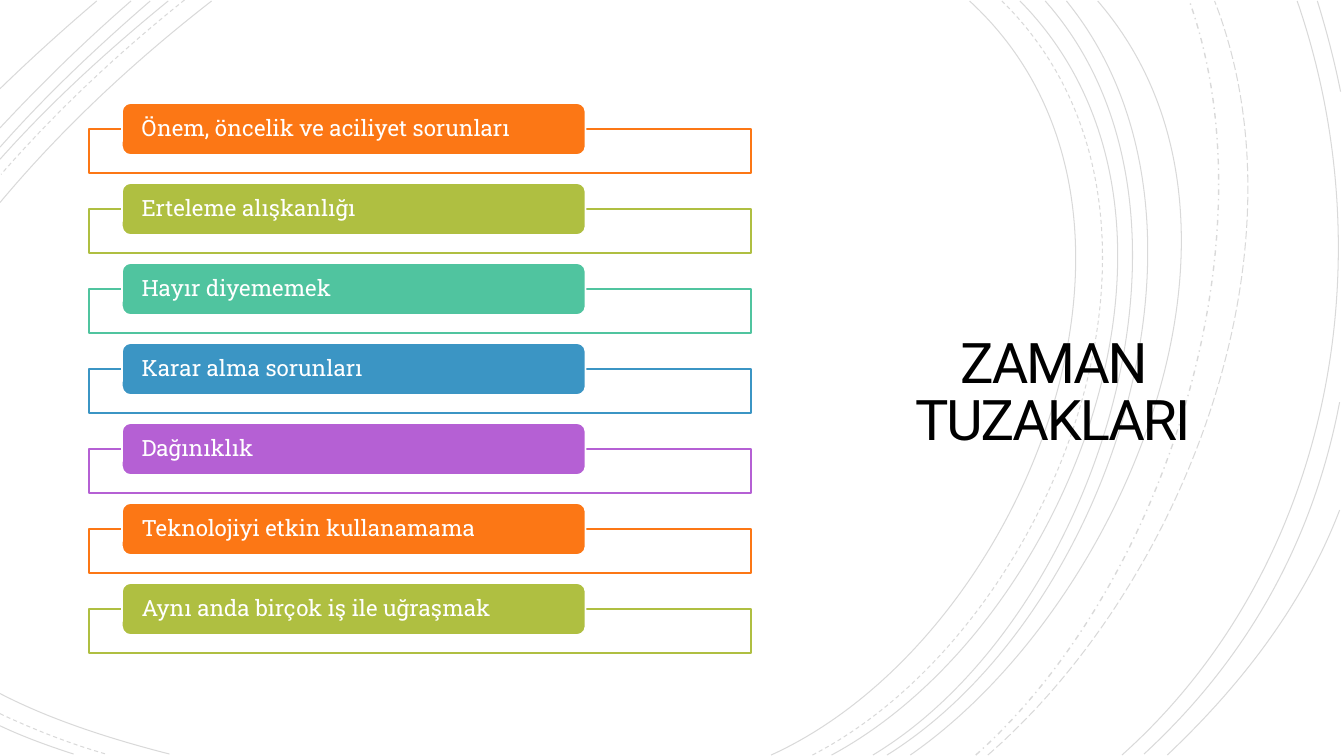
import dataclasses
import pptx
import pptx.dml.color
import pptx.enum.dml
import pptx.enum.shapes
import pptx.enum.text
import pptx.oxml
import pptx.oxml.ns
import pptx.util

Pt = pptx.util.Pt
RGB = pptx.dml.color.RGBColor.from_string
Dash = pptx.enum.dml.MSO_LINE
Align = pptx.enum.text.PP_ALIGN
Preset = pptx.enum.shapes.MSO_SHAPE
qn = pptx.oxml.ns.qn


@dataclasses.dataclass(frozen=True)
class Theme:
    paper: str = "FFFFFF"
    ink: str = "000000"
    accents: tuple = ("FC7715", "AFBF41", "50C49F", "3B95C4", "B560D4")
    title_font: str = "Roboto"
    label_font: str = "Roboto Slab"
    title_size: int = 40
    label_size: int = 16


theme = Theme()


def write(shape, text, *, font, size, color, align, spacing, insets, tracking=0):
    frame = shape.text_frame
    frame.word_wrap = True
    frame.auto_size = pptx.enum.text.MSO_AUTO_SIZE.NONE
    frame.vertical_anchor = pptx.enum.text.MSO_ANCHOR.MIDDLE
    frame.margin_left = frame.margin_right = Pt(insets[0])
    frame.margin_top = frame.margin_bottom = Pt(insets[1])
    paragraph = frame.paragraphs[0]
    paragraph.alignment = align
    paragraph.line_spacing = spacing
    run = paragraph.add_run()
    run.text = text
    run.font.name = font
    run.font.size = Pt(size)
    run.font.color.rgb = RGB(color)
    if tracking:
        run.font._element.set("spc", str(int(tracking * 100)))


def paint(fill, color, opacity=100):
    fill.solid()
    fill.fore_color.rgb = RGB(color)
    if opacity < 100:
        tint = fill._xPr.find(qn("a:solidFill"))[0]
        pptx.oxml.ns  # namespace registry
        tint.append(pptx.oxml.parse_xml(
            '<a:alpha xmlns:a="http://schemas.openxmlformats.org/drawingml/2006/main" '
            f'val="{opacity * 1000}"/>'))


deck = pptx.Presentation()
deck.slide_width, deck.slide_height = Pt(960), Pt(540)
slide = deck.slides.add_slide(deck.slide_layouts[5])
paint(slide.background.fill, theme.paper)

BOTTOM, TOP = 539.3, 0.7
sweeps = [
    (Dash.SOLID, 550.8, (731.5, 457.2), (855.4, 150.5), 692.6),
    (Dash.DASH, 580.3, (753.1, 450), (869.8, 152.6), 715.7),
    (Dash.SOLID, 594, (763.9, 447.8), (879.1, 153.4), 728.6),
    (Dash.SOLID, 623.5, (782.6, 443.5), (879.1, 149.8), 746.6),
    (Dash.SOLID, 633.6, (792, 440.6), (887.8, 155.5), 761.8),
    (Dash.SOLID, 650.2, (801.4, 434.2), (920.2, 158.4), 784.1),
    (Dash.DASH_DOT, 697, (830.9, 419.8), (910.8, 173.5), 849.6),
    (Dash.LONG_DASH, 705.6, (844.6, 418.3), (937.4, 180.7), 867.6),
    (Dash.SOLID, 801.4, (950.4, 406.1), (990.7, 186.5), 926.6),
]
corner_arcs = [
    (Dash.SOLID, (817.2, 538.6), (891.4, 470.2), (938.2, 385.9), (956.9, 287.3)),
    (Dash.SOLID, (957.6, 65.5), (953.3, 43.9), (947.5, 21.6), (941, 0.7)),
    (Dash.SOLID, (833.8, 539.3), (886.3, 489.6), (931, 432), (956.9, 364.3)),
    (Dash.SOLID, (0, 495.4), (37.4, 514.8), (81.4, 528.5), (121, 538.6)),
    (Dash.DASH, (0, 509.8), (24.5, 521.3), (50.4, 531.4), (75.6, 538.6)),
    (Dash.SOLID, (0, 518.4), (16.6, 526.3), (34.6, 532.8), (52.6, 538.6)),
    (Dash.SOLID, (151.2, 0.7), (96.5, 43.2), (44.6, 91.4), (0, 144.7)),
    (Dash.DASH, (131.8, 0), (85, 37.4), (40.3, 79.2), (0.7, 124.6)),
    (Dash.SOLID, (120.2, 0.7), (77.8, 35.3), (36.7, 72.7), (0, 113.8)),
    (Dash.SOLID, (107.3, 0.7), (69.8, 33.1), (33.1, 67.7), (0, 105.1)),
    (Dash.SOLID, (93.6, 0.7), (60.5, 29.5), (29.5, 59.8), (0, 91.4)),
    (Dash.SOLID, (69.1, 0.7), (45.4, 20.9), (22.3, 41.8), (0, 63.4)),
]
arcs = [(dash, (foot, BOTTOM), low, high, (head, TOP))
        for dash, foot, low, high, head in sweeps] + corner_arcs

for dash, *points in arcs:
    start, *bends = [(Pt(x), Pt(y)) for x, y in points]
    outline = slide.shapes.build_freeform(*start)
    outline.add_line_segments(bends, close=False)
    arc = outline.convert_to_shape()
    arc.shadow.inherit = False
    arc.fill.background()
    paint(arc.line.fill, theme.ink, 15)
    arc.line.width = Pt(1 if dash == Dash.DASH_DOT else 0.75)
    arc.line.dash_style = dash
    route = next(arc._element.iter(qn("a:path")))
    curve = route.makeelement(qn("a:cubicBezTo"))
    for segment in route.findall(qn("a:lnTo")):
        curve.append(segment[0])
        route.remove(segment)
    route.append(curve)

heading = slide.shapes.title
heading.left, heading.top, heading.width, heading.height = Pt(614), Pt(185), Pt(276), Pt(194)
write(heading, "ZAMAN TUZAKLARI", font=theme.title_font, size=theme.title_size,
      color=theme.ink, align=Align.CENTER, spacing=0.85, insets=(18, 18), tracking=-1.5)

time_traps = [
    "Önem, öncelik ve aciliyet sorunları",
    "Erteleme alışkanlığı",
    "Hayır diyememek",
    "Karar alma sorunları",
    "Dağınıklık",
    "Teknolojiyi etkin kullanamama",
    "Aynı anda birçok iş ile uğraşmak",
]
FIRST_TOP, PITCH = 73.6, 57.14

for row, trap in enumerate(time_traps):
    accent = theme.accents[row % len(theme.accents)]
    top = FIRST_TOP + row * PITCH
    tray = slide.shapes.add_shape(Preset.RECTANGLE, Pt(63.4), Pt(top + 18.5), Pt(473), Pt(31.7))
    label = slide.shapes.add_shape(Preset.ROUNDED_RECTANGLE, Pt(87.1), Pt(top), Pt(331.2), Pt(37.2))
    for part, fill, line, opacity in ((tray, theme.paper, accent, 90),
                                      (label, accent, theme.paper, 100)):
        part.shadow.inherit = False
        paint(part.fill, fill, opacity)
        paint(part.line.fill, line)
        part.line.width = Pt(1.25)
    write(label, trap, font=theme.label_font, size=theme.label_size, color=theme.paper,
          align=Align.LEFT, spacing=0.9, insets=(12.2, 0))

deck.save("out.pptx")
